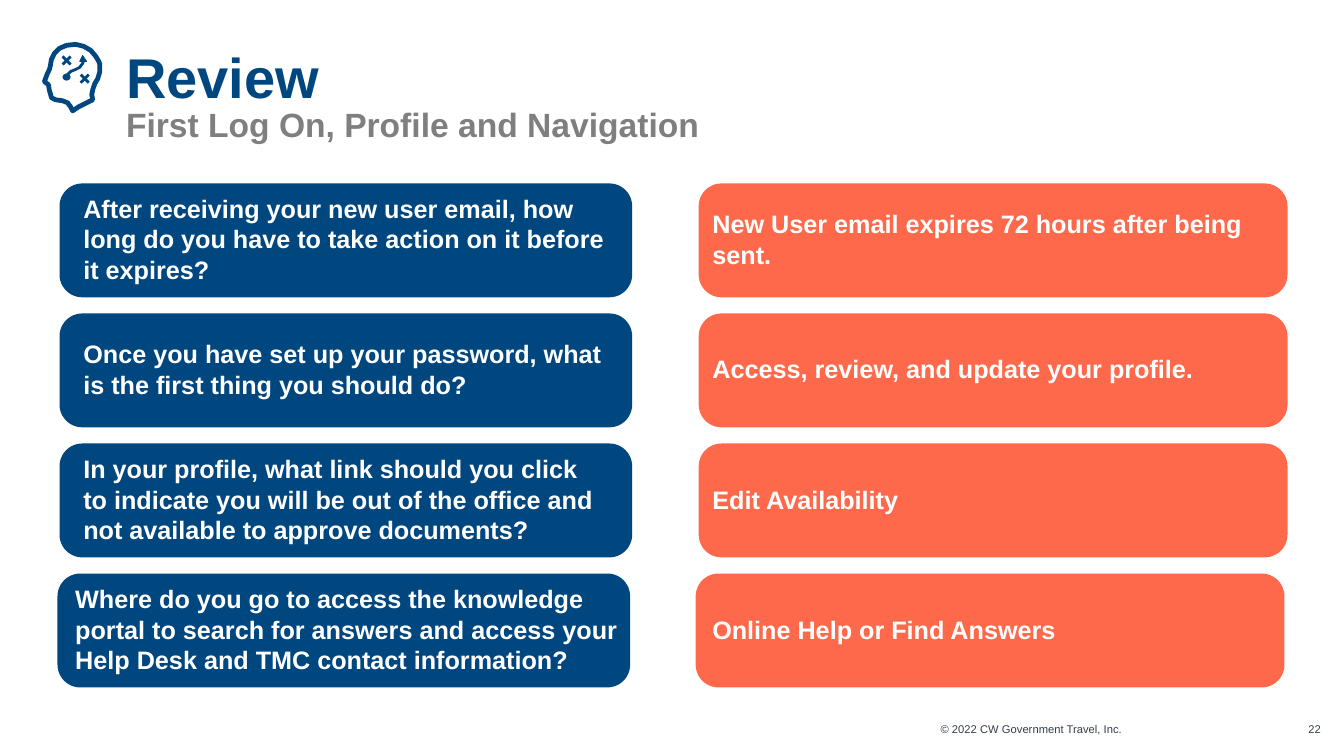
from dataclasses import dataclass

from pptx import Presentation
from pptx.dml.color import RGBColor
from pptx.enum.shapes import MSO_SHAPE
from pptx.enum.text import MSO_ANCHOR, MSO_AUTO_SIZE, PP_ALIGN
from pptx.util import Pt

SCALE = 9144  # EMU per px, 100 px to the inch
COLORS = {
    "navy": "00467F",
    "coral": "FF694B",
    "gray": "7F7F7F",
    "slate": "333F48",
    "white": "FFFFFF",
}
ROW_TOP, ROW_PITCH, CARD_HEIGHT = 182, 129, 113


@dataclass
class Card:
    row: int
    left: int
    width: int
    color: str
    text: str
    margin_left: int  # added to the inset of the rounded corners
    margin_right: int


@dataclass
class Caption:
    left: int
    width: int
    text: str


@dataclass
class Stroke:
    points: list[tuple[int, int]]
    weight: float
    closed: bool = False
    filled: bool = False


CARDS = [
    Card(0, 59, 568, "navy", "After receiving your new user email, how long do you "
         "have to take action on it before it expires?", 17, 20),
    Card(0, 693, 584, "coral", "New User email expires 72 hours after being sent.", 7, 0),
    Card(1, 59, 568, "navy", "Once you have set up your password, what is the first "
         "thing you should do?", 17, 20),
    Card(1, 693, 584, "coral", "Access, review, and update your profile.", 7, 0),
    Card(2, 59, 568, "navy", "In your profile, what link should you click to indicate "
         "you will be out of the office and not available to approve documents?", 17, 20),
    Card(2, 693, 584, "coral", "Edit Availability", 7, 0),
    Card(3, 57, 568, "navy", "Where do you go to access the knowledge portal to search "
         "for answers and access your Help Desk and TMC contact information?", 11, 0),
    Card(3, 690, 584, "coral", "Online Help or Find Answers", 10, 0),
]
CAPTIONS = [
    Caption(838, 275, "© 2022 CW Government Travel, Inc."),
    Caption(1287, 23, "22"),
]
HEAD = [
    (99, 64), (99, 71), (97, 78), (94, 83), (92, 89), (91, 94), (92, 99), (84, 103),
    (78, 106), (72, 110), (70, 106), (67, 102), (62, 100), (55, 99), (51, 97), (50, 93),
    (49, 90), (48, 84), (44, 81), (47, 73), (49, 69), (50, 65), (51, 59), (54, 53),
    (59, 48), (66, 45), (75, 44), (83, 46), (90, 50), (95, 56), (98, 61),
]
ROUTE = [(66, 76), (67, 74), (70, 71), (75, 69), (79, 67), (82, 63), (83, 60)]
ARROWHEAD = [(82, 55), (79, 61), (86, 61)]
CROSS_CENTERS = [(66, 60), (84, 78)]


def px(value: int) -> int:
    return value * SCALE


def rgb(name: str) -> RGBColor:
    return RGBColor.from_string(COLORS[name])


def format_run(run, size: int, color: str, bold: bool) -> None:
    run.font.name = "Arial"
    run.font.size = Pt(size)
    run.font.bold = bold
    run.font.color.rgb = rgb(color)


def clear_margins(text_frame) -> None:
    text_frame.margin_left = text_frame.margin_right = 0
    text_frame.margin_top = text_frame.margin_bottom = 0
    text_frame.word_wrap = True


def draw_stroke(slide, stroke: Stroke) -> None:
    start, *others = stroke.points
    builder = slide.shapes.build_freeform(*start, scale=SCALE)
    builder.add_line_segments(others, close=stroke.closed)
    shape = builder.convert_to_shape()
    shape.shadow.inherit = False
    if stroke.filled:
        shape.fill.solid()
        shape.fill.fore_color.rgb = rgb("navy")
    else:
        shape.fill.background()
    shape.line.color.rgb = rgb("navy")
    shape.line.width = Pt(stroke.weight)


def draw_icon(slide) -> None:
    strokes = [
        Stroke(HEAD, 3.4, closed=True),
        Stroke(ROUTE, 2),
        Stroke(ARROWHEAD, 0.5, closed=True, filled=True),
    ]
    for x, y in CROSS_CENTERS:
        for slope in (1, -1):
            strokes.append(Stroke([(x - 4, y - 4 * slope), (x + 4, y + 4 * slope)], 2))
    for stroke in strokes:
        draw_stroke(slide, stroke)
    dot = slide.shapes.add_shape(MSO_SHAPE.OVAL, px(62), px(73), px(8), px(7))
    dot.shadow.inherit = False
    dot.fill.solid()
    dot.fill.fore_color.rgb = rgb("navy")
    dot.line.fill.background()


def draw_title(slide) -> None:
    title = slide.shapes.title
    title.left, title.top, title.width, title.height = px(125), px(51), px(1153), px(92)
    text_frame = title.text_frame
    text_frame.text = "Review\vFirst Log On, Profile and Navigation"
    clear_margins(text_frame)
    text_frame.auto_size = MSO_AUTO_SIZE.NONE
    text_frame.vertical_anchor = MSO_ANCHOR.BOTTOM
    paragraph = text_frame.paragraphs[0]
    paragraph.alignment = PP_ALIGN.LEFT
    paragraph.line_spacing = 0.85
    heading, subtitle = paragraph.runs
    format_run(heading, 40, "navy", True)
    format_run(subtitle, 24, "gray", True)


def draw_card(slide, card: Card) -> None:
    top = ROW_TOP + card.row * ROW_PITCH
    shape = slide.shapes.add_shape(MSO_SHAPE.ROUNDED_RECTANGLE, px(card.left), px(top),
                                   px(card.width), px(CARD_HEIGHT))
    shape.adjustments[0] = 0.2
    shape.shadow.inherit = False
    shape.fill.solid()
    shape.fill.fore_color.rgb = rgb(card.color)
    shape.line.fill.background()
    text_frame = shape.text_frame
    text_frame.text = card.text
    clear_margins(text_frame)
    text_frame.margin_left = px(card.margin_left)
    text_frame.margin_right = px(card.margin_right)
    text_frame.margin_bottom = px(3)
    text_frame.vertical_anchor = MSO_ANCHOR.MIDDLE
    paragraph = text_frame.paragraphs[0]
    paragraph.alignment = PP_ALIGN.LEFT
    format_run(paragraph.runs[0], 18, "white", True)


def draw_caption(slide, caption: Caption) -> None:
    box = slide.shapes.add_textbox(px(caption.left), px(717), px(caption.width), px(14))
    box.text_frame.text = caption.text
    clear_margins(box.text_frame)
    paragraph = box.text_frame.paragraphs[0]
    paragraph.alignment = PP_ALIGN.RIGHT
    format_run(paragraph.runs[0], 8, "slate", False)


def main() -> None:
    presentation = Presentation()
    presentation.slide_width, presentation.slide_height = px(1333), px(750)
    slide = presentation.slides.add_slide(presentation.slide_layouts[5])

    # Heading
    draw_icon(slide)
    draw_title(slide)

    # Questions and answers
    for card in CARDS:
        draw_card(slide, card)

    # Footer
    for caption in CAPTIONS:
        draw_caption(slide, caption)

    presentation.save("out.pptx")


if __name__ == "__main__":
    main()
